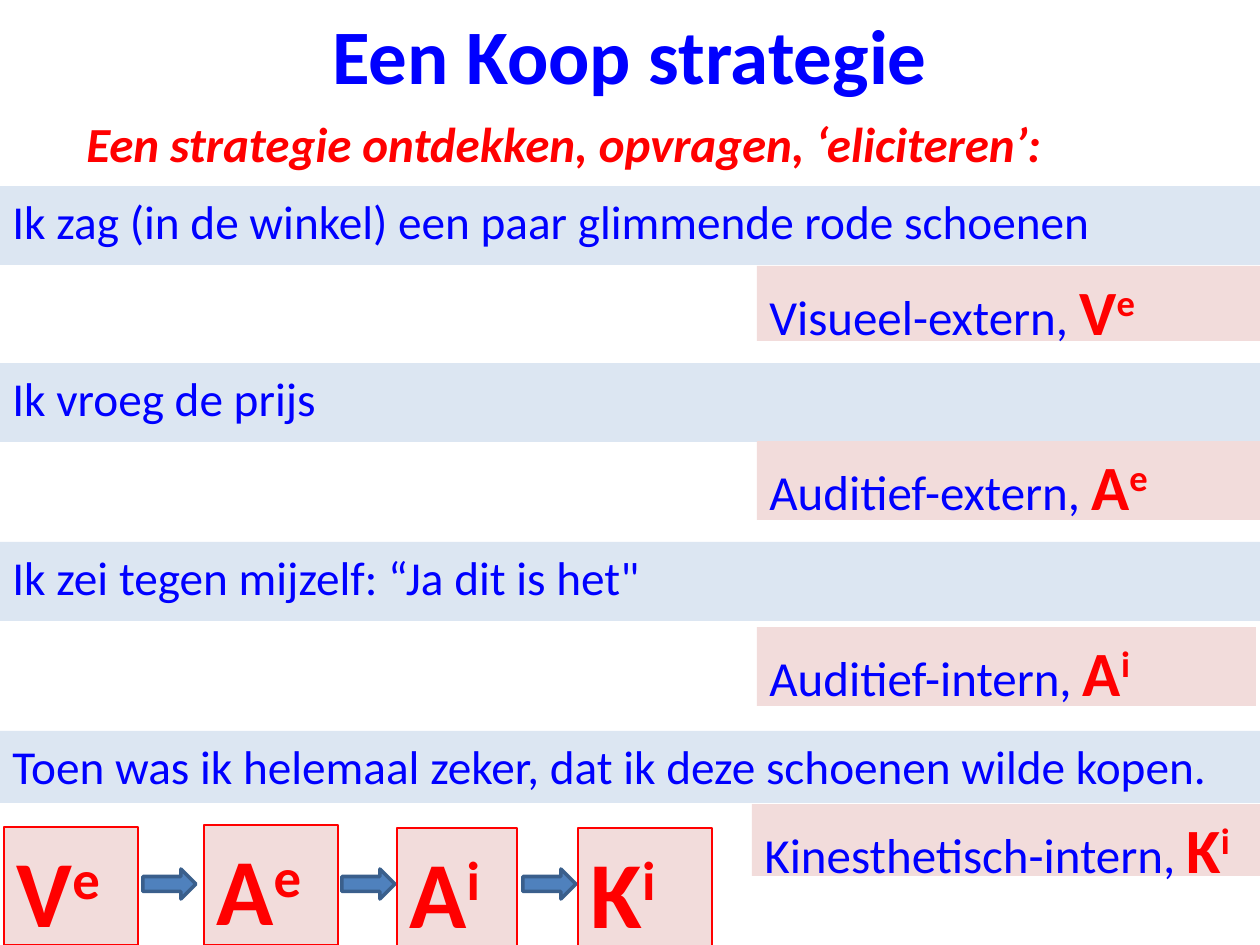
from lxml import etree
from pptx import Presentation
from pptx.dml.color import RGBColor
from pptx.enum.shapes import MSO_SHAPE as Shape
from pptx.enum.text import MSO_ANCHOR as Anchor, PP_ALIGN as Align
from pptx.oxml.ns import qn
from pptx.util import Emu, Pt

FONT = "Calibri"
BLUE, RED = "0000FF", "FF0000"
PALE_BLUE, PALE_RED = "DCE6F2", "F2DCDB"
ARROW_FILL, ARROW_LINE = "4F81BD", "3A5F8C"

# statement, top, width, height
STATEMENTS = [
    ("Ik zag (in de winkel) een paar glimmende rode schoenen", 186, 1263, 79),
    ("Ik vroeg de prijs", 363, 1263, 79),
    ("Ik zei tegen mijzelf: “Ja dit is het\"", 542, 1263, 79),
    ("Toen was ik helemaal zeker, dat ik deze schoenen wilde kopen.", 731, 1260, 72),
]
# sense, letter, superscript, box
SENSES = [
    ("Visueel-extern, ", "V", "e", (757, 266, 503, 75)),
    ("Auditief-extern, ", "A", "e", (757, 441, 503, 79)),
    ("Auditief-intern, ", "A", "i", (757, 627, 499, 79)),
    ("Kinesthetisch-intern, ", "K", "i", (752, 804, 508, 72)),
]
STEP_BOXES = [
    (4, 827, 134, 118),
    (204, 825, 134, 120),
    (397, 828, 120, 120),
    (578, 828, 134, 120),
]
ARROW_LEFTS = [143, 342, 523]


def px(length):
    return Emu(round(length * 914400 / 126))


def rgb(value):
    return RGBColor.from_string(value)


def style_font(font, size, color, bold=False, italic=False):
    font.name = FONT
    font.size = Pt(size)
    font.color.rgb = rgb(color)
    font.bold = bold
    font.italic = italic


def add_block(slide, kind, box, fill, line=None, line_width=0.75):
    shape = slide.shapes.add_shape(kind, *map(px, box))
    shape.shadow.inherit = False
    shape.fill.solid()
    shape.fill.fore_color.rgb = rgb(fill)
    if line:
        shape.line.color.rgb = rgb(line)
        shape.line.width = Pt(line_width)
    else:
        shape.line.fill.background()
    return shape


def hanging_paragraph(shape):
    """Return the shape's paragraph, set top left with a hanging indent."""
    frame = shape.text_frame
    frame.word_wrap = True
    frame.vertical_anchor = Anchor.TOP
    paragraph = frame.paragraphs[0]
    paragraph.alignment = Align.LEFT
    properties = paragraph._p.get_or_add_pPr()
    properties.set("marL", "342900")
    properties.set("indent", "-342900")
    space_before = etree.SubElement(properties, qn("a:spcBef"))
    etree.SubElement(space_before, qn("a:spcPct")).set("val", "20000")
    return paragraph


def add_code(paragraph, letter, superscript, size):
    """Append a bold red letter with its superscript."""
    for text in (letter, superscript):
        run = paragraph.add_run()
        run.text = text
        style_font(run.font, size, RED, bold=True)
    run._r.get_or_add_rPr().set("baseline", "30000")


def add_title(slide, text):
    title = slide.shapes.title
    title.left, title.top, title.width, title.height = map(px, (63, 0, 1134, 107))
    title.text_frame.text = text
    title.text_frame.vertical_anchor = Anchor.MIDDLE
    paragraph = title.text_frame.paragraphs[0]
    paragraph.alignment = Align.CENTER
    style_font(paragraph.font, 44, BLUE, bold=True)


def add_subtitle(slide, text):
    frame = slide.shapes.add_textbox(*map(px, (74, 107, 1186, 72))).text_frame
    frame.word_wrap = True
    frame.text = text
    style_font(frame.paragraphs[0].font, 28, RED, bold=True, italic=True)


def add_statement(slide, text, top, width, height):
    bar = add_block(slide, Shape.RECTANGLE, (0, top, width, height), PALE_BLUE)
    paragraph = hanging_paragraph(bar)
    paragraph.add_run().text = text
    style_font(paragraph.font, 27, BLUE)


def add_sense(slide, name, letter, superscript, box):
    label = add_block(slide, Shape.RECTANGLE, box, PALE_RED)
    paragraph = hanging_paragraph(label)
    run = paragraph.add_run()
    run.text = name
    style_font(run.font, 28, BLUE)
    add_code(paragraph, letter, superscript, 36)


def add_step(slide, letter, superscript, box):
    step = add_block(slide, Shape.RECTANGLE, box, PALE_RED, RED)
    add_code(hanging_paragraph(step), letter, superscript, 54)


def main():
    presentation = Presentation()
    presentation.slide_width, presentation.slide_height = px(1260), px(945)
    slide = presentation.slides.add_slide(presentation.slide_layouts[5])
    add_title(slide, "Een Koop strategie")
    add_subtitle(slide, "Een strategie ontdekken, opvragen, ‘eliciteren’:")
    for statement in STATEMENTS:
        add_statement(slide, *statement)
    for sense in SENSES:
        add_sense(slide, *sense)
    for (_, letter, superscript, _), box in zip(SENSES, STEP_BOXES):
        add_step(slide, letter, superscript, box)
    for left in ARROW_LEFTS:
        add_block(slide, Shape.RIGHT_ARROW, (left, 869, 53, 30),
                  ARROW_FILL, ARROW_LINE, 2)
    presentation.save("out.pptx")


if __name__ == "__main__":
    main()
